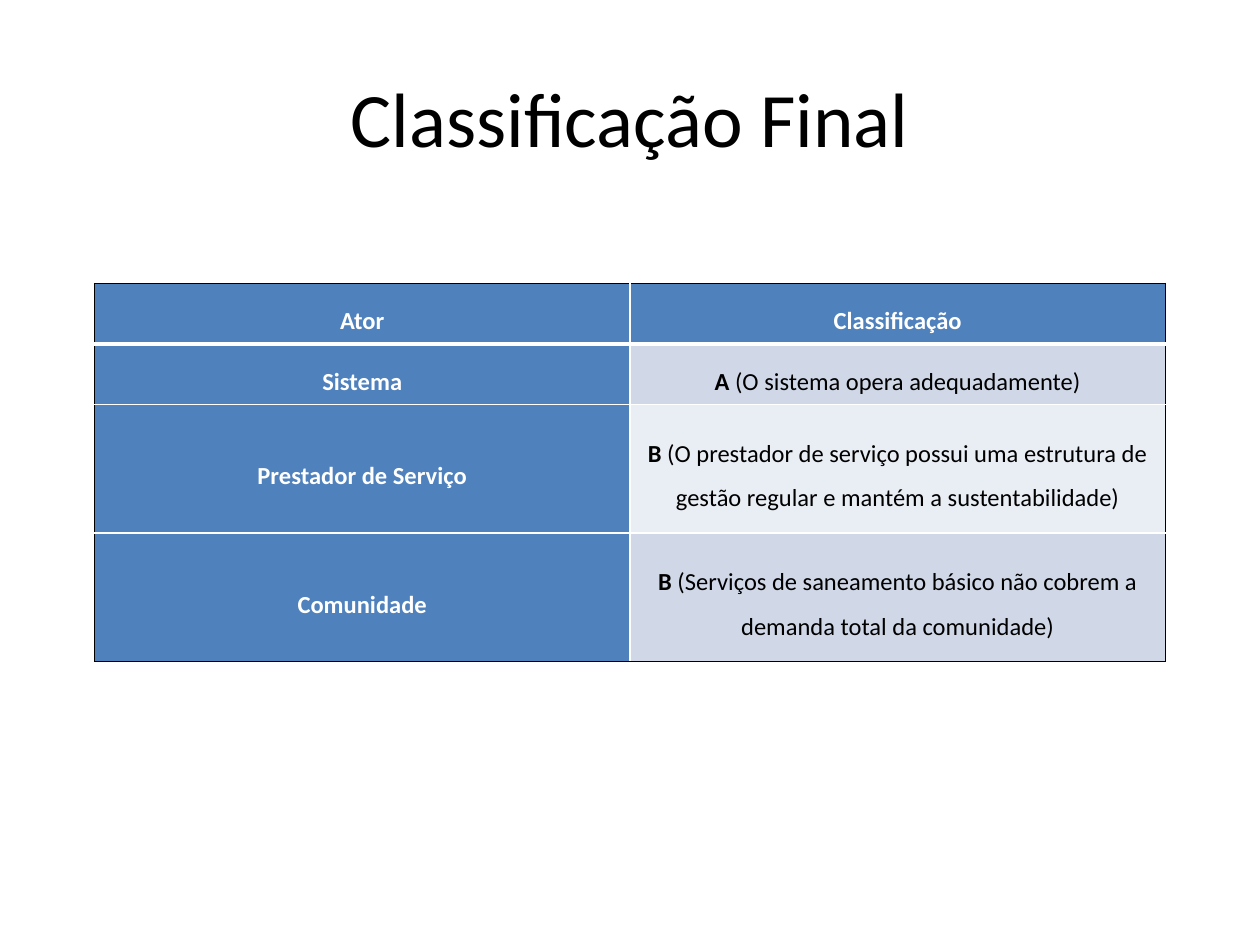
"""Build the final classification slide."""
import dataclasses

import lxml.etree
import pptx
import pptx.dml.color
import pptx.enum.text
import pptx.oxml.ns
import pptx.util

EMU_PER_PX = 9144


@dataclasses.dataclass(frozen=True)
class Theme:
    font: str = "Calibri"
    title_size: int = 44
    table_size: int = 14
    black: str = "000000"
    white: str = "FFFFFF"
    accent: str = "4F81BD"
    bands: tuple = ("D0D8E8", "E9EDF4")
    thin: int = 1
    thick: int = 3


def px(length):
    return pptx.util.Emu(length * EMU_PER_PX)


class SlideBuilder:
    def __init__(self, slide, theme):
        self.slide = slide
        self.theme = theme

    def format_run(self, run, size, color, bold=False):
        run.font.name = self.theme.font
        run.font.size = pptx.util.Pt(size)
        run.font.bold = bold
        run.font.color.rgb = pptx.dml.color.RGBColor.from_string(color)

    def title(self, text, left, top, width, height):
        shape = self.slide.shapes.title
        shape.left, shape.top = px(left), px(top)
        shape.width, shape.height = px(width), px(height)
        frame = shape.text_frame
        frame.text = text
        frame.vertical_anchor = pptx.enum.text.MSO_ANCHOR.MIDDLE
        paragraph = frame.paragraphs[0]
        paragraph.alignment = pptx.enum.text.PP_ALIGN.CENTER
        self.format_run(paragraph.runs[0], self.theme.title_size, self.theme.black)

    def border(self, cell, side, color, width):
        qn = pptx.oxml.ns.qn
        properties = cell._tc.get_or_add_tcPr()
        line = lxml.etree.SubElement(
            properties, qn(f"a:ln{side}"), w=str(pptx.util.Pt(width))
        )
        fill = lxml.etree.SubElement(line, qn("a:solidFill"))
        lxml.etree.SubElement(fill, qn("a:srgbClr"), val=color)

    def cell(self, cell, parts, fill, color, borders):
        for side, (line_color, width) in borders.items():
            self.border(cell, side, line_color, width)
        cell.fill.solid()
        cell.fill.fore_color.rgb = pptx.dml.color.RGBColor.from_string(fill)
        cell.vertical_anchor = pptx.enum.text.MSO_ANCHOR.MIDDLE
        cell.margin_left = cell.margin_right = px(7)
        cell.margin_top = cell.margin_bottom = px(0)
        paragraph = cell.text_frame.paragraphs[0]
        paragraph.alignment = pptx.enum.text.PP_ALIGN.CENTER
        paragraph.line_spacing = 1.5
        for index, text in enumerate(parts):
            run = paragraph.add_run()
            run.text = text
            self.format_run(run, self.theme.table_size, color, bold=index == 0)

    def table(self, rows, left, top, column_widths, row_heights):
        theme = self.theme
        table = self.slide.shapes.add_table(
            len(rows), len(column_widths), px(left), px(top),
            px(sum(column_widths)), px(sum(row_heights)),
        ).table
        for column, width in zip(table.columns, column_widths):
            column.width = px(width)
        for row, height in zip(table.rows, row_heights):
            row.height = px(height)
        outer, inner = (theme.black, theme.thin), (theme.white, theme.thin)
        header_rule = (theme.white, theme.thick)
        last_row, last_column = len(rows) - 1, len(column_widths) - 1
        for r, row in enumerate(rows):
            for c, parts in enumerate(row):
                borders = {
                    "L": outer if c == 0 else inner,
                    "R": outer if c == last_column else inner,
                    "T": outer if r == 0 else header_rule if r == 1 else inner,
                    "B": outer if r == last_row else header_rule if r == 0 else inner,
                }
                is_heading = r == 0 or c == 0
                fill = theme.accent if is_heading else theme.bands[(r - 1) % 2]
                color = theme.white if is_heading else theme.black
                self.cell(table.cell(r, c), parts, fill, color, borders)


def main():
    presentation = pptx.Presentation()
    presentation.slide_width, presentation.slide_height = px(1000), px(750)
    slide = presentation.slides.add_slide(presentation.slide_layouts[5])
    builder = SlideBuilder(slide, Theme())
    builder.title("Classificação Final", 50, 30, 900, 125)
    rows = [
        (["Ator"], ["Classificação"]),
        (["Sistema"], ["A", " (O sistema opera adequadamente)"]),
        (["Prestador de Serviço"],
         ["B", " (O prestador de serviço possui uma estrutura de gestão "
               "regular e mantém a sustentabilidade)"]),
        (["Comunidade"],
         ["B", " (Serviços de saneamento básico não cobrem a demanda total "
               "da comunidade)"]),
    ]
    builder.table(rows, 75, 225, [425, 425], [48, 48, 102, 102])
    presentation.save("out.pptx")


if __name__ == "__main__":
    main()
